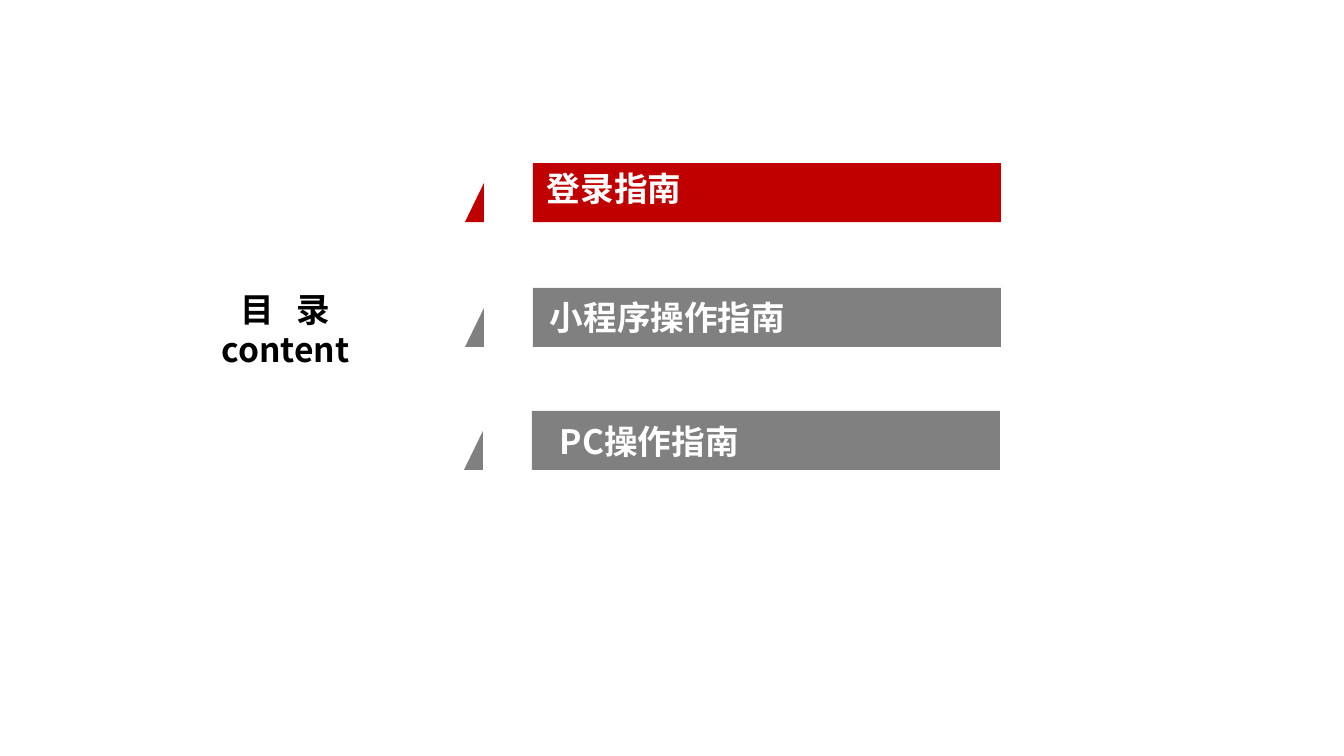
import dataclasses

import pptx
import pptx.dml.color
import pptx.enum.text
import pptx.oxml.ns
import pptx.util
from lxml import etree

PX = 914400 / 134.4


def emu(px):
    return pptx.util.Emu(round(px * PX))


@dataclasses.dataclass(frozen=True)
class Theme:
    font: str = "Noto Sans CJK SC"
    size: int = 18
    active: str = "C00000"
    idle: str = "808080"
    light: str = "FFFFFF"
    dark: str = "000000"


class Builder:
    def __init__(self, slide, theme):
        self.slide = slide
        self.theme = theme

    def text(self, left, top, width, height, lines, color, align):
        box = self.slide.shapes.add_textbox(*map(emu, (left, top, width, height)))
        frame = box.text_frame
        frame.margin_left = frame.margin_right = 0
        frame.margin_top = frame.margin_bottom = 0
        frame.word_wrap = True
        frame.vertical_anchor = pptx.enum.text.MSO_ANCHOR.MIDDLE
        frame.text = "\n".join(lines)
        for para in frame.paragraphs:
            para.alignment = align
            for span in para.runs:
                self.style(span, color)
        return box

    def style(self, span, color):
        span.font.size = pptx.util.Pt(self.theme.size)
        span.font.bold = True
        span.font.color.rgb = pptx.dml.color.RGBColor.from_string(color)
        span.font.name = self.theme.font
        east = etree.SubElement(span.font._element, pptx.oxml.ns.qn("a:ea"))
        east.set("typeface", self.theme.font)

    def banner(self, left, top, color):
        bottom = top + 59
        bar_left, bar_right = left + 68, left + 536
        outline = self.slide.shapes.build_freeform(left + 19, top + 20, scale=PX)
        outline.add_line_segments([(left + 19, bottom), (left, bottom)])
        outline.move_to(bar_left, top)
        outline.add_line_segments(
            [(bar_right, top), (bar_right, bottom), (bar_left, bottom)]
        )
        shape = outline.convert_to_shape()
        shape.shadow.inherit = False
        shape.fill.solid()
        shape.fill.fore_color.rgb = pptx.dml.color.RGBColor.from_string(color)
        shape.line.fill.background()


def main():
    deck = pptx.Presentation()
    deck.slide_width, deck.slide_height = emu(1344), emu(756)
    theme = Theme()
    builder = Builder(deck.slides.add_slide(deck.slide_layouts[6]), theme)
    align = pptx.enum.text.PP_ALIGN

    title = builder.text(
        149, 288, 273, 82, ["目 录", "content"], theme.dark, align.CENTER
    )
    heading = title.text_frame.paragraphs[0]
    heading.runs[0].text = "目 "
    heading.runs[0].font._element.set("spc", "400")
    last = heading.add_run()
    last.text = "录"
    builder.style(last, theme.dark)

    entries = [
        (465, 163, theme.active, "登录指南", 547, 168),
        (465, 288, theme.idle, "小程序操作指南", 550, 297),
        (464, 411, theme.idle, "PC操作指南", 560, 421),
    ]
    for left, top, color, label, label_left, label_top in entries:
        builder.banner(left, top, color)
        builder.text(label_left, label_top, 327, 40, [label], theme.light, align.LEFT)

    deck.save("out.pptx")


if __name__ == "__main__":
    main()
